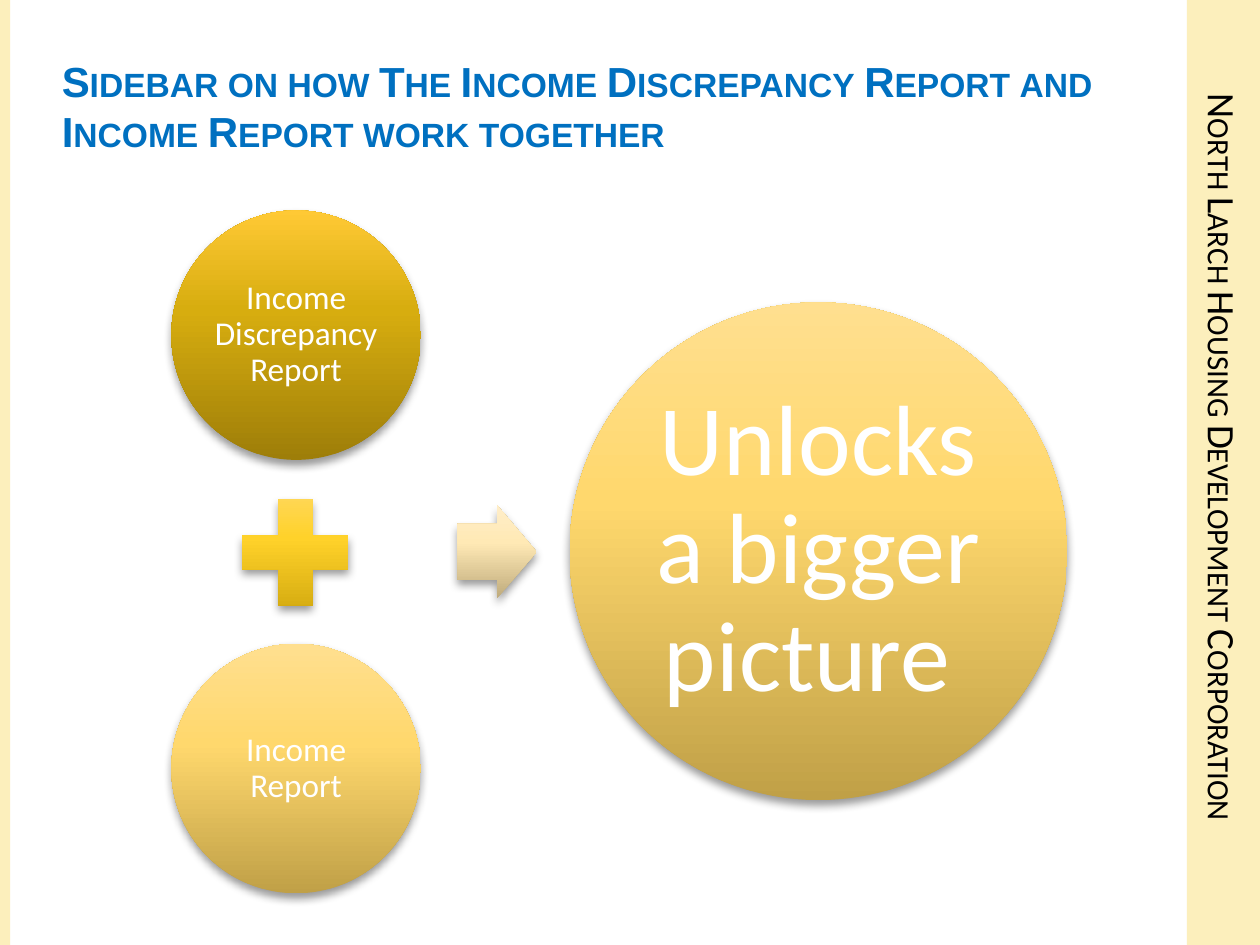
from dataclasses import dataclass
from typing import Any, Optional

from lxml.etree import SubElement
from pptx import Presentation
from pptx.dml.color import RGBColor
from pptx.enum.shapes import MSO_SHAPE
from pptx.enum.text import MSO_ANCHOR, MSO_AUTO_SIZE, PP_ALIGN
from pptx.oxml.ns import qn
from pptx.util import Pt

SCALE = 9144  # EMU in one px, 100 px to the inch


@dataclass(frozen=True)
class Theme:
    band: str = "FCEFBC"
    title: str = "0070C0"
    ink: str = "000000"
    white: str = "FFFFFF"
    gold: tuple = ("9E7E09", "D7AD0F", "FFC935")
    plus: tuple = ("CCA30B", "FFD22A", "FFD968")
    pale: tuple = ("C0A047", "FFD86D", "FFDF8F")
    cream: tuple = ("BFAB7C", "FFE9B5", "FFEEC9")
    stops: tuple = (0, 60, 100)
    head: str = "Arial"
    body: str = "Calibri"
    title_pt: float = 24
    side_pt: float = 22.2
    small_pt: float = 19
    large_pt: float = 57


@dataclass(frozen=True)
class Box:
    left: int
    top: int
    width: int
    height: int

    def emu(self) -> tuple:
        return tuple(n * SCALE for n in (self.left, self.top, self.width, self.height))


@dataclass(frozen=True)
class Node:
    kind: MSO_SHAPE
    box: Box
    shades: tuple
    text: str = ""
    size: float = 0
    inset: int = 0
    adjust: tuple = ()


THEME = Theme()
BANDS = (Box(942, 0, 58, 750), Box(0, 0, 8, 750))
SIDE = Box(942, 42, 58, 642)
TITLE = Box(49, 44, 891, 102)
NODES = (
    Node(MSO_SHAPE.OVAL, Box(136, 167, 198, 198), THEME.gold,
         "Income Discrepancy Report", THEME.small_pt, 3),
    Node(MSO_SHAPE.MATH_PLUS, Box(177, 381, 115, 115), THEME.plus),
    Node(MSO_SHAPE.OVAL, Box(136, 511, 198, 198), THEME.pale,
         "Income Report", THEME.small_pt, 3),
    Node(MSO_SHAPE.RIGHT_ARROW, Box(363, 401, 63, 74), THEME.cream, adjust=(0.6, 0.5)),
    Node(MSO_SHAPE.OVAL, Box(452, 240, 395, 395), THEME.pale,
         "Unlocks a bigger picture ", THEME.large_pt, 8),
)


def apply(target: Any, values: dict) -> None:
    for name, value in values.items():
        setattr(target, name, value)


def write(shape: Any, text: str, face: str, size: float, color: str,
          inset: int = 0, align: PP_ALIGN = PP_ALIGN.CENTER,
          anchor: MSO_ANCHOR = MSO_ANCHOR.MIDDLE, bold: bool = False,
          caps: bool = False, spacing: Optional[float] = None) -> None:
    frame = shape.text_frame
    sides = ("margin_left", "margin_top", "margin_right", "margin_bottom")
    apply(frame, dict.fromkeys(sides, inset * SCALE))
    apply(frame, {"word_wrap": True, "auto_size": MSO_AUTO_SIZE.NONE,
                  "vertical_anchor": anchor})
    para = frame.paragraphs[0]
    apply(para, {"alignment": align, "line_spacing": spacing})
    run = para.add_run()
    run.text = text
    apply(run.font, {"name": face, "size": Pt(size), "bold": bold})
    run.font.color.rgb = RGBColor.from_string(color)
    if caps:
        run.font._element.set("cap", "small")


def shade(shape: Any, colors: tuple) -> None:
    """Fill with a gradient that rises from the first colour at the bottom."""
    shape.fill.gradient()
    shape.fill.gradient_angle = 90
    stops = shape._element.spPr.find(f".//{qn('a:gsLst')}")
    for old in list(stops):
        stops.remove(old)
    for place, color in zip(THEME.stops, colors):
        stop = SubElement(stops, qn("a:gs"), pos=str(place * 1000))
        SubElement(stop, qn("a:srgbClr"), val=color)


def drop_shadow(shape: Any) -> None:
    effects = shape._element.spPr.find(qn("a:effectLst"))
    outer = SubElement(effects, qn("a:outerShdw"), blurRad=str(Pt(5.2)),
                       dist=str(Pt(3)), dir="5400000", rotWithShape="0")
    color = SubElement(outer, qn("a:srgbClr"), val=THEME.ink)
    SubElement(color, qn("a:alpha"), val="40000")


def add_plain(slide: Any, kind: MSO_SHAPE, box: Box) -> Any:
    shape = slide.shapes.add_shape(kind, *box.emu())
    shape.shadow.inherit = False
    shape.line.fill.background()
    return shape


def draw_band(slide: Any, box: Box) -> None:
    band = add_plain(slide, MSO_SHAPE.RECTANGLE, box)
    band.fill.solid()
    band.fill.fore_color.rgb = RGBColor.from_string(THEME.band)


def draw_node(slide: Any, node: Node) -> None:
    shape = add_plain(slide, node.kind, node.box)
    for index, value in enumerate(node.adjust):
        shape.adjustments[index] = value
    shade(shape, node.shades)
    drop_shadow(shape)
    if node.text:
        write(shape, node.text, THEME.body, node.size, THEME.white,
              inset=node.inset, spacing=0.9)


def draw_side(slide: Any) -> None:
    side = slide.shapes.add_textbox(*SIDE.emu())
    write(side, "North Larch Housing Development Corporation", THEME.body,
          THEME.side_pt, THEME.ink, caps=True)
    side.text_frame._txBody.bodyPr.set("vert", "vert")


def draw_title(slide: Any) -> None:
    title = slide.shapes.title
    apply(title, dict(zip(("left", "top", "width", "height"), TITLE.emu())))
    write(title, "Sidebar on how The Income Discrepancy Report and Income Report work together",
          THEME.head, THEME.title_pt, THEME.title, align=PP_ALIGN.LEFT,
          anchor=MSO_ANCHOR.TOP, bold=True, caps=True)


def main() -> None:
    deck = Presentation()
    apply(deck, {"slide_width": 1000 * SCALE, "slide_height": 750 * SCALE})
    slide = deck.slides.add_slide(deck.slide_layouts.get_by_name("Title Only"))
    for box in BANDS:
        draw_band(slide, box)
    draw_side(slide)
    draw_title(slide)
    for node in NODES:
        draw_node(slide, node)
    deck.save("out.pptx")


if __name__ == "__main__":
    main()
